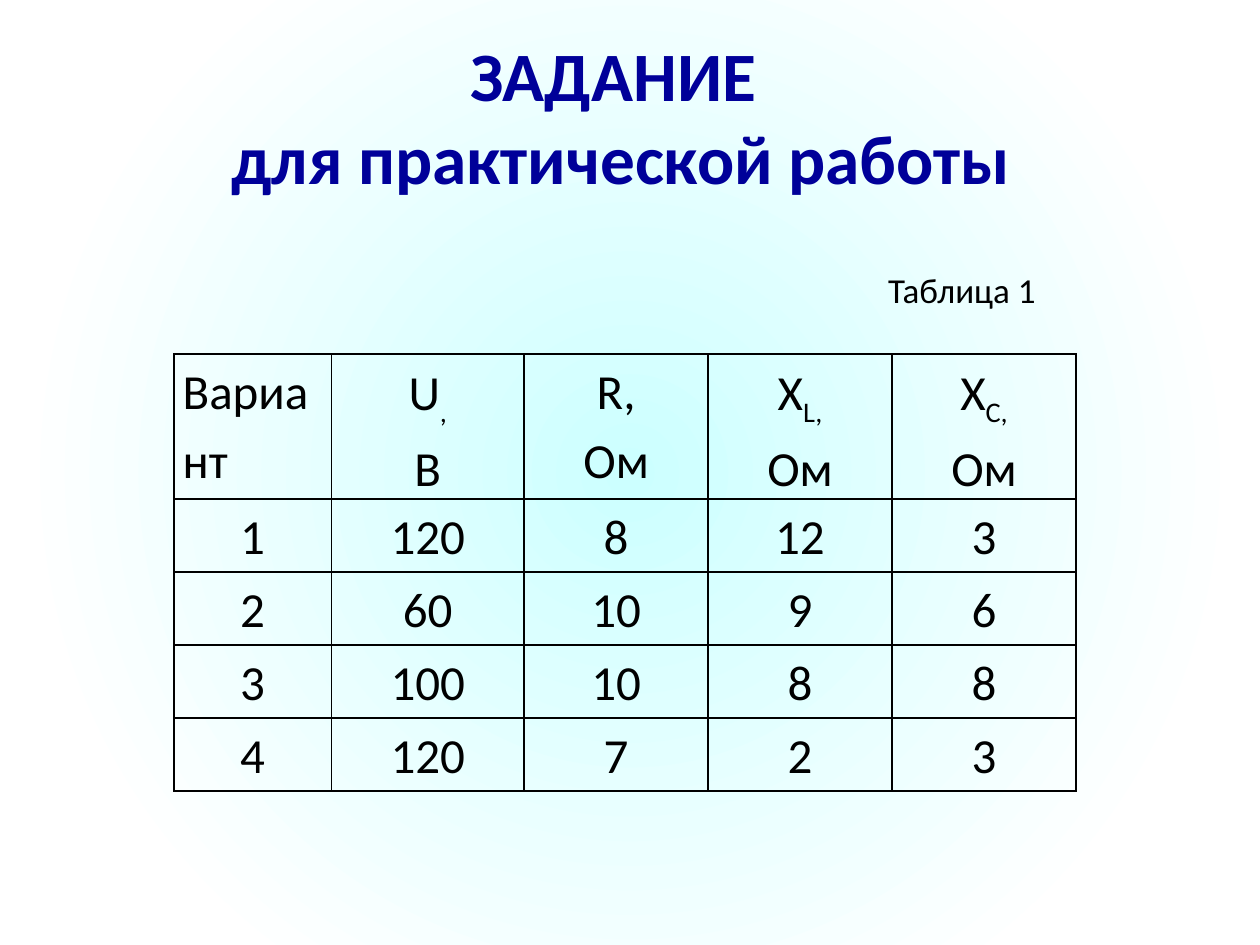
from lxml import etree
from pptx import Presentation
from pptx.dml.color import RGBColor
from pptx.enum.text import MSO_ANCHOR, PP_ALIGN
from pptx.oxml.ns import qn
from pptx.util import Inches, Pt

LEFT, CENTER = PP_ALIGN.LEFT, PP_ALIGN.CENTER
TOP, MIDDLE = MSO_ANCHOR.TOP, MSO_ANCHOR.MIDDLE

BLACK = RGBColor(0, 0, 0)
THEME = {
    "title": {"name": "Calibri", "size": Pt(39.6), "bold": True},
    "label": {"name": "Calibri", "size": Pt(20), "bold": False},
    "cell": {"name": "Calibri", "size": Pt(28), "bold": False},
    "color": {"title": RGBColor(0, 0, 0x99), "label": BLACK, "cell": BLACK},
    "glow": [(0, "CCFFFF"), (78, "FFFFFF"), (100, "FFFFFF")],
    "border": "000000",
}


def style(font, kind):
    for key, value in THEME[kind].items():
        setattr(font, key, value)
    font.color.rgb = THEME["color"][kind]


def node(parent, tag, **attrs):
    return etree.SubElement(parent, qn(tag), attrs)


deck = Presentation()
deck.slide_width, deck.slide_height = Inches(10), Inches(7.5)
slide = deck.slides.add_slide(deck.slide_layouts[6])

slide.background.fill.gradient()
grad = next(slide.element.iter(qn("a:gradFill")))
for child in list(grad):
    grad.remove(child)
stops = node(grad, "a:gsLst")
for place, color in THEME["glow"]:
    stop = node(stops, "a:gs", pos=str(place * 1000))
    node(stop, "a:srgbClr", val=color)
glow = node(grad, "a:path", path="circle")
node(glow, "a:fillToRect", l="50000", t="50000", r="50000", b="50000")

for kind, text, area, anchor in [
    ("title", "ЗАДАНИЕ \vдля практической работы", (0.43, 0.29, 9, 1.25), MIDDLE),
    ("label", "Таблица 1", (6.65, 2.08, 1.97, 0.74), TOP),
]:
    frame = slide.shapes.add_textbox(*map(Inches, area)).text_frame
    frame.word_wrap = True
    frame.vertical_anchor = anchor
    para = frame.paragraphs[0]
    para.text = text
    para.alignment = CENTER
    style(para.font, kind)
    for run in para.runs:
        style(run.font, kind)

HEADS = [
    [("Вариант", "")],
    [("U", ","), ("В", "")],
    [("R,", ""), ("Ом", "")],
    [("X", "L,"), ("Ом", "")],
    [("X", "C,"), ("Ом", "")],
]
DATA = [
    (1, 120, 8, 12, 3),
    (2, 60, 10, 9, 6),
    (3, 100, 10, 8, 8),
    (4, 120, 7, 2, 3),
]
ROWS = [HEADS] + [[[(str(value), "")] for value in row] for row in DATA]
WIDTHS = [1.25, 1.53, 1.46, 1.46, 1.46]
HEIGHTS = [1.15] + [0.58] * len(DATA)
INSETS = {
    "margin_left": Inches(0.07),
    "margin_right": Inches(0.07),
    "margin_top": 0,
    "margin_bottom": 0,
}

area = map(Inches, (1.38, 2.81, sum(WIDTHS), sum(HEIGHTS)))
table = slide.shapes.add_table(len(ROWS), len(WIDTHS), *area).table
table.first_row = table.horz_banding = False
for col, width in zip(table.columns, WIDTHS):
    col.width = Inches(width)
for row, height in zip(table.rows, HEIGHTS):
    row.height = Inches(height)

for r, row in enumerate(ROWS):
    for c, lines in enumerate(row):
        cell = table.cell(r, c)
        for key, value in INSETS.items():
            setattr(cell, key, value)
        props = cell._tc.get_or_add_tcPr()
        for side in ("a:lnL", "a:lnR", "a:lnT", "a:lnB"):
            line = node(props, side, w=str(Pt(1)))
            node(node(line, "a:solidFill"), "a:srgbClr", val=THEME["border"])
        cell.fill.background()
        frame = cell.text_frame
        for i, (base, sub) in enumerate(lines):
            para = frame.add_paragraph() if i else frame.paragraphs[0]
            para.alignment = LEFT if r == c == 0 else CENTER
            para.line_spacing = 1.15
            for text, shift in ((base, "0"), (sub, "-25000")):
                if text:
                    run = para.add_run()
                    run.text = text
                    style(run.font, "cell")
                    run.font._element.set("baseline", shift)

deck.save("out.pptx")
